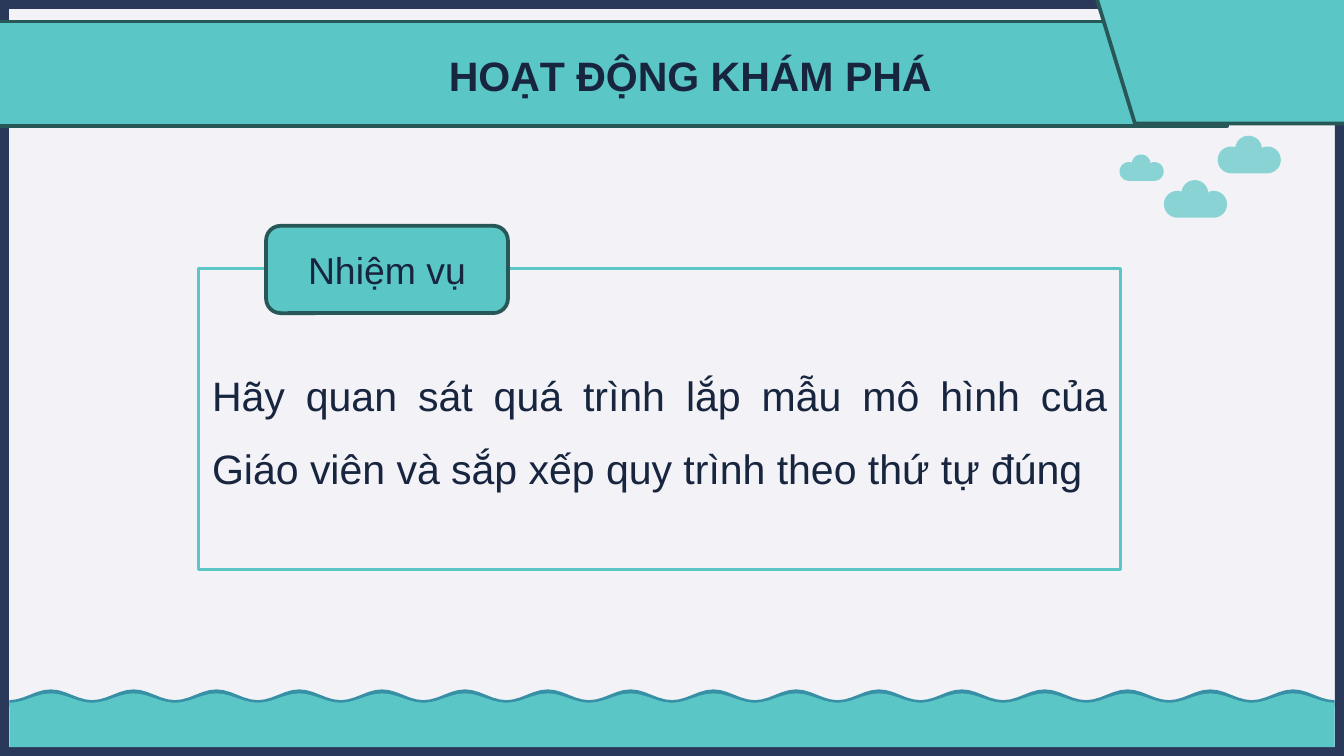
from math import cos, sin, pi, radians
from lxml.etree import SubElement
from pptx import Presentation
from pptx.dml.color import RGBColor
from pptx.enum.shapes import MSO_SHAPE
from pptx.enum.text import MSO_ANCHOR, MSO_AUTO_SIZE, PP_ALIGN
from pptx.oxml.ns import qn
from pptx.util import Inches, Pt

# Content
TITLE = "HOẠT ĐỘNG KHÁM PHÁ"
LABEL = "Nhiệm vụ"
TASK = ("Hãy quan sát quá trình lắp mẫu mô hình của Giáo viên "
        "và sắp xếp quy trình theo thứ tự đúng")

# Theme
THEME = dict(font="Arial", back="F3F2F7", navy="2A395A", teal="5BC6C6",
             edge="285757", crest="3790A5", ink="17253F",
             title=22, body=22, label=20)

# Layout, in inches
WIDE = 10
HIGH = WIDE * 9 / 16
RIM = 0.07
WAVES = [  # crest, trough, bottom, colour
    (5.13, 5.21, 5.26, "crest"),
    (5.16, 5.23, 5.56, "teal"),
]
COUNT, STEPS = 16, 12  # waves across, points in each
CLOUDS = [(8.33, 1.15, 0.7), (9.06, 1.01, 1), (8.66, 1.34, 1)]  # left, top, scale
LOBES = [  # centre x, centre y, start angle, end angle
    (0.23, 0.1, 180, 360),
    (0.37, 0.18, -110, 90),
    (0.1, 0.18, 90, 290),
]
RADIUS = 0.1


def tint(name):
    return RGBColor.from_string(THEME[name])


def paint(shape, fill=None, line=None, width=2):
    shape.shadow.inherit = False
    if fill:
        shape.fill.solid()
        shape.fill.fore_color.rgb = tint(fill)
    else:
        shape.fill.background()
    if line:
        shape.line.color.rgb = tint(line)
        shape.line.width = Pt(width)
    else:
        shape.line.fill.background()
    return shape


def add(kind, box, **look):
    return paint(slide.shapes.add_shape(kind, *map(Inches, box)), **look)


def trace(group, points, fill):
    first, *rest = [(Inches(x), Inches(y)) for x, y in points]
    pen = group.shapes.build_freeform(*first)
    pen.add_line_segments(rest, close=True)
    return paint(pen.convert_to_shape(), fill)


def write(shape, text, size, align, bold=False, space=None):
    frame = shape.text_frame
    frame.word_wrap = True
    frame.auto_size = MSO_AUTO_SIZE.NONE
    frame.vertical_anchor = MSO_ANCHOR.MIDDLE
    frame.margin_left = frame.margin_right = Inches(0.1)
    frame.margin_top = frame.margin_bottom = Inches(0.1)
    para = frame.paragraphs[0]
    para.text = text
    para.alignment = align
    para.line_spacing = space
    font = para.font
    font.name, font.size, font.bold = THEME["font"], Pt(THEME[size]), bold
    font.color.rgb = tint("ink")


deck = Presentation()
deck.slide_width, deck.slide_height = Inches(WIDE), Inches(HIGH)
slide = deck.slides.add_slide(deck.slide_layouts[5])
slide.background.fill.solid()
slide.background.fill.fore_color.rgb = tint("back")

# Border
rim = add(MSO_SHAPE.FRAME, (0, 0, WIDE, HIGH), fill="navy")
rim.adjustments[0] = 0.012

# Sea
sea = slide.shapes.add_group_shape()
for top, low, base, fill in WAVES:
    total = COUNT * STEPS
    curve = [(RIM + (WIDE - 2 * RIM) * i / total,
              (top + low) / 2 + (low - top) / 2 * cos(2 * pi * i / STEPS))
             for i in range(total + 1)]
    trace(sea, curve + [(WIDE - RIM, base), (RIM, base)], fill)

# Clouds
sky = slide.shapes.add_group_shape()
for left, top, scale in CLOUDS:
    points = []
    for x, y, start, end in LOBES:
        for i in range(17):
            turn = radians(start + (end - start) * i / 16)
            points.append((left + scale * (x + RADIUS * cos(turn)),
                           top + scale * (y + RADIUS * sin(turn))))
    cloud = trace(sky, points, "teal")
    shade = cloud.element.spPr.find(qn("a:solidFill"))[0]
    SubElement(shade, qn("a:alpha")).set("val", "69000")

# Task box and its label
task = add(MSO_SHAPE.RECTANGLE, (1.48, 2, 6.86, 2.24), line="teal", width=1.5)
write(task, TASK, "body", PP_ALIGN.JUSTIFY, space=1.5)
label = add(MSO_SHAPE.ROUNDED_RECTANGLE, (1.98, 1.68, 1.8, 0.65),
            fill="teal", line="edge")
write(label, LABEL, "label", PP_ALIGN.CENTER)

# Title band and corner
add(MSO_SHAPE.RECTANGLE, (-0.47, 0.16, 9.6, 0.78), fill="teal", line="edge")
add(MSO_SHAPE.REGULAR_PENTAGON, (7.95, -1.7, 2.59, 2.62), fill="teal", line="edge")

# Title, in front of the band
title = slide.shapes.title
title.left, title.top, title.width, title.height = map(
    Inches, (3.24, 0.27, 8.43, 0.63))
write(title, TITLE, "title", PP_ALIGN.LEFT, bold=True, space=0.9)
title.element.getparent().append(title.element)

deck.save("out.pptx")
